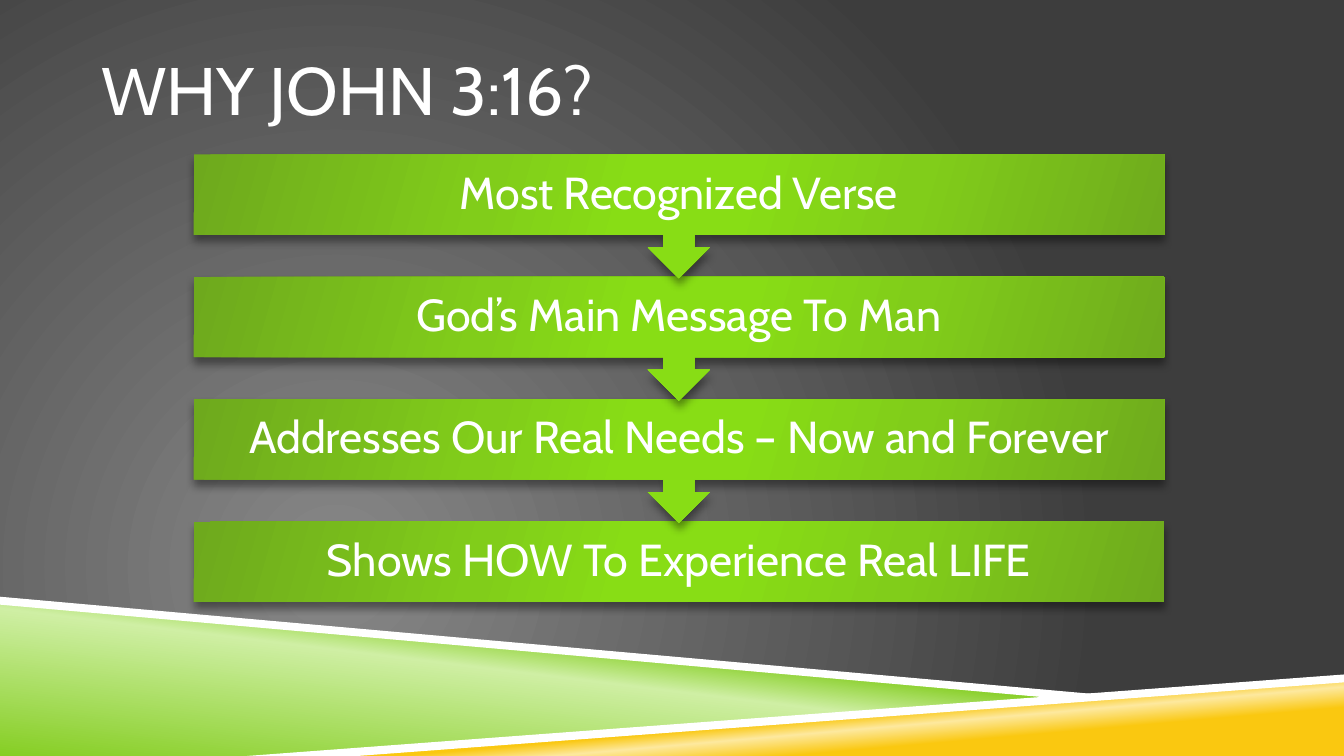
"""Build the "Why John 3:16?" slide with a vertical chain of reasons."""
from dataclasses import dataclass

import pptx
import pptx.dml.color
import pptx.enum.shapes
import pptx.enum.text
import pptx.oxml.ns
import pptx.util

Cm = pptx.util.Cm
qn = pptx.oxml.ns.qn


@dataclass(frozen=True)
class Theme:
    """Colours, gradients and type of the slide."""
    font: str = "Cabin"
    title_size: int = 36
    step_size: int = 24
    white: str = "FFFFFF"
    shadow: str = "000000"
    backdrop: tuple = ((0, "878787"), (100, "3D3D3D"))
    green_band: tuple = ((0, "86CE24"), (52, "CFEFA4"), (66, "86CE24"))
    gold_band: tuple = ((28, "FAC810"), (40, "FDE99F"), (48, "FAC810"))
    step: tuple = ((0, "6EA91D"), (30, "81CD1A"), (45, "88DD15"),
                   (55, "88DD15"), (73, "81CD1A"), (100, "6EA91D"))


@dataclass(frozen=True)
class Box:
    """A region of the slide in centimetres."""
    left: float
    top: float
    width: float
    height: float


THEME = Theme()
PAGE = Box(0, 0, 25.4, 14.29)
TITLE = Box(1.91, 0.58, 21.59, 2.39)
STEPS = Box(3.66, 2.92, 18.34, 8.46)
BANDS = Box(0, 11.28, 25.4, 3.01)
REASONS = (
    "Most Recognized Verse",
    "God’s Main Message To Man",
    "Addresses Our Real Needs – Now and Forever",
    "Shows HOW To Experience Real LIFE",
)


def add_child(parent, tag, **attributes):
    """Append a DrawingML element and return it."""
    child = parent.makeelement(qn(tag), {name: str(value) for name, value in attributes.items()})
    parent.append(child)
    return child


def set_gradient(fill, element, stops, angle=None):
    """Apply a linear gradient, or a radial one when no angle is given."""
    fill.gradient()
    gradient = next(element.iter(qn("a:gradFill")))
    gradient.clear()
    gradient.set("rotWithShape", "1")
    stop_list = add_child(gradient, "a:gsLst")
    for position, color in stops:
        stop = add_child(stop_list, "a:gs", pos=position * 1000)
        add_child(stop, "a:srgbClr", val=color)
    if angle is None:
        radial = add_child(gradient, "a:path", path="circle")
        add_child(radial, "a:fillToRect", l=50000, t=100000, r=100000, b=50000)
    else:
        add_child(gradient, "a:lin", ang=angle * 60000, scaled=0)


def set_shadow(shape):
    """Give a shape a soft shadow below it."""
    shape.shadow.inherit = False
    effects = next(shape.element.iter(qn("a:effectLst")))
    shadow = add_child(effects, "a:outerShdw", blurRad=pptx.util.Pt(4),
                       dist=pptx.util.Pt(3.3), dir=90 * 60000, rotWithShape=0)
    color = add_child(shadow, "a:srgbClr", val=THEME.shadow)
    add_child(color, "a:alpha", val=40000)


def write_text(shape, text, size, alignment, side_inset=0):
    """Write one vertically centred line into a shape."""
    frame = shape.text_frame
    frame.text = text
    frame.word_wrap = True
    frame.auto_size = pptx.enum.text.MSO_AUTO_SIZE.NONE
    frame.vertical_anchor = pptx.enum.text.MSO_ANCHOR.MIDDLE
    frame.margin_left = frame.margin_right = Cm(side_inset)
    frame.margin_top = frame.margin_bottom = 0
    paragraph = frame.paragraphs[0]
    paragraph.alignment = alignment
    paragraph.line_spacing = 0.9
    font = paragraph.runs[0].font
    font.name = THEME.font
    font.size = pptx.util.Pt(size)
    font.color.rgb = pptx.dml.color.RGBColor.from_string(THEME.white)


def add_polygon(slide, box, points):
    """Draw a closed outline from points measured from the corner of the box."""
    corners = [(Cm(box.left + x), Cm(box.top + y)) for x, y in points]
    builder = slide.shapes.build_freeform(*corners[0])
    builder.add_line_segments(corners[1:], close=True)
    shape = builder.convert_to_shape()
    shape.shadow.inherit = False
    shape.line.fill.background()
    return shape


def add_bands(slide, box):
    """Draw the slanted bands with their white edges along the foot."""
    right, bottom = box.width, box.height
    bands = (
        (((0, 0.1), (20.12, 1.9), (5.08, bottom), (0, bottom)), THEME.green_band, 277),
        (((5.03, bottom), (right, 1.52), (right, bottom)), THEME.gold_band, 265),
    )
    edges = (
        ((0, 0), (0, 0.15), (20.07, 1.93), (21.13, 1.88)),
        ((right, 1.47), (4.67, bottom), (6.76, bottom), (right, 1.62)),
    )
    for points, stops, angle in bands:
        band = add_polygon(slide, box, points)
        set_gradient(band.fill, band.element, stops, angle)
    for points in edges:
        edge = add_polygon(slide, box, points)
        edge.fill.solid()
        edge.fill.fore_color.rgb = pptx.dml.color.RGBColor.from_string(THEME.white)


def add_title(slide, box, text):
    """Place the slide title."""
    title = slide.shapes.title
    title.left, title.top = Cm(box.left), Cm(box.top)
    title.width, title.height = Cm(box.width), Cm(box.height)
    write_text(title, text, THEME.title_size, pptx.enum.text.PP_ALIGN.LEFT)


def add_steps(slide, box, reasons):
    """Stack the reasons from the last up, so that each arrow overlaps the next bar."""
    kinds = pptx.enum.shapes.MSO_SHAPE
    bar_height, callout_height = 1.52, 2.34
    last = len(reasons) - 1
    pitch = (box.height - bar_height) / last
    for index in range(last, -1, -1):
        is_last = index == last
        step = slide.shapes.add_shape(
            kinds.RECTANGLE if is_last else kinds.DOWN_ARROW_CALLOUT,
            Cm(box.left), Cm(box.top + index * pitch),
            Cm(box.width), Cm(bar_height if is_last else callout_height))
        set_gradient(step.fill, step.element, THEME.step, 16)
        step.line.fill.background()
        set_shadow(step)
        write_text(step, reasons[index], THEME.step_size,
                   pptx.enum.text.PP_ALIGN.CENTER, side_inset=0.48)


def main():
    """Build and save the presentation."""
    presentation = pptx.Presentation()
    presentation.slide_width = Cm(PAGE.width)
    presentation.slide_height = Cm(PAGE.height)
    slide = presentation.slides.add_slide(presentation.slide_layouts.get_by_name("Title Only"))
    set_gradient(slide.background.fill, slide.element, THEME.backdrop)
    add_bands(slide, BANDS)
    add_title(slide, TITLE, "WHY JOHN 3:16?")
    add_steps(slide, STEPS, REASONS)
    presentation.save("out.pptx")


if __name__ == "__main__":
    main()
